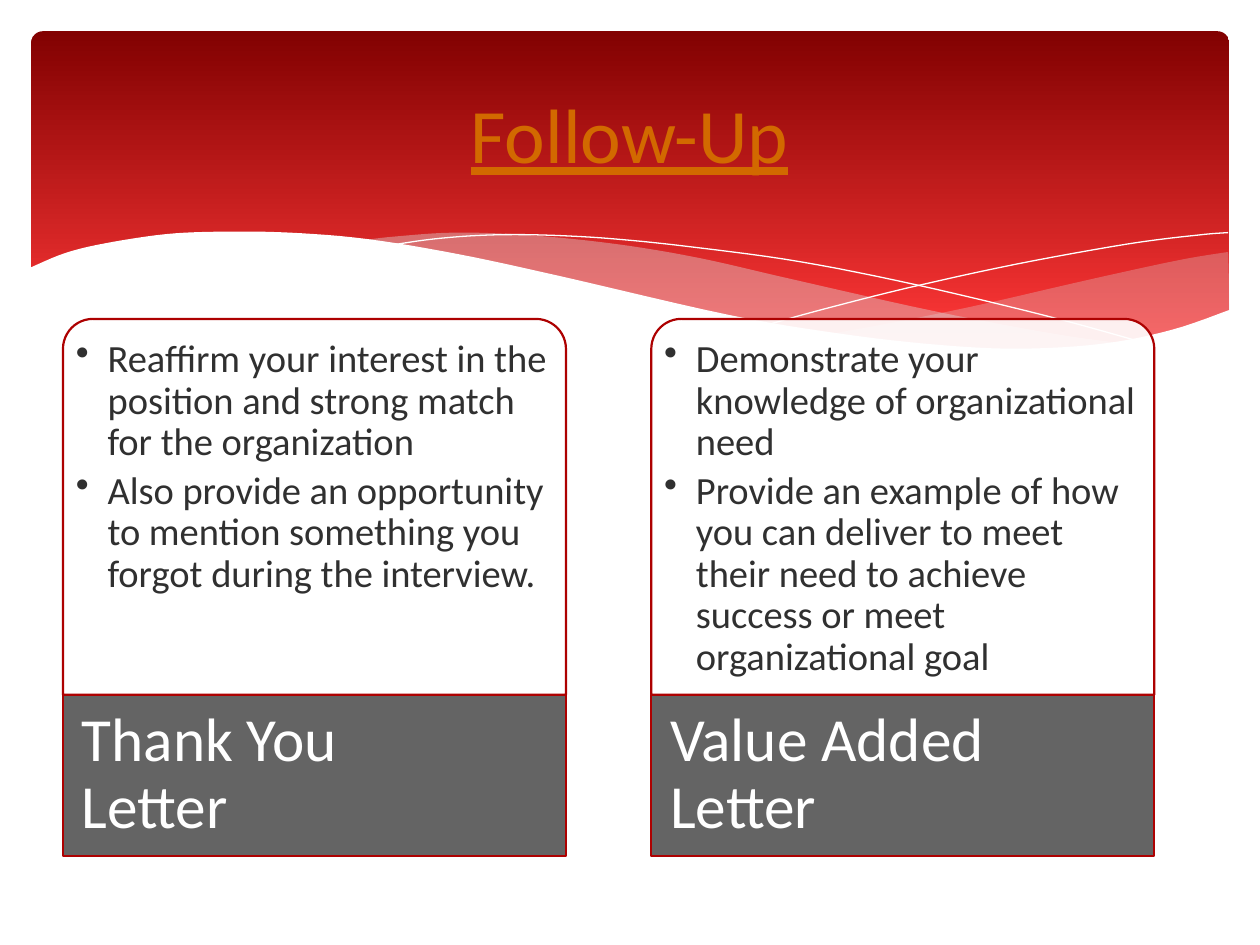
from lxml.etree import SubElement
from pptx import Presentation
from pptx.dml.color import RGBColor
from pptx.enum.shapes import MSO_SHAPE
from pptx.enum.text import MSO_ANCHOR, PP_ALIGN
from pptx.oxml.ns import qn
from pptx.util import Cm, Pt

DARK_RED = RGBColor(0x82, 0x01, 0x01)
BRIGHT_RED = RGBColor(0xFE, 0x37, 0x37)
BORDER_RED = RGBColor(0xAD, 0x01, 0x01)
ORANGE = RGBColor(0xD2, 0x69, 0x00)
MIST = RGBColor(0xDE, 0xDE, 0xE0)
GRAY = RGBColor(0x64, 0x64, 0x64)
CHARCOAL = RGBColor(0x30, 0x30, 0x30)
WHITE = RGBColor(0xFF, 0xFF, 0xFF)

RIGHT_SWELL_TOP = [(24.13, 4.45), (23.11, 4.62), (21.23, 5.03), (19.15, 5.51),
                   (17.3, 5.89), (16.15, 6.1)]
RIGHT_SWELL_BOTTOM = [(16.15, 6.1), (17.63, 6.27), (18.9, 6.38), (20.04, 6.43),
                      (21.29, 6.38), (22.35, 6.22), (23.29, 5.94), (24.16, 5.64)]
MIDDLE_SWELL_TOP = [(22.05, 6.3), (20.62, 6.1), (18.19, 5.64), (15.34, 5),
                    (13.46, 4.57), (11.79, 4.29), (10.03, 4.11), (8.53, 4.06),
                    (7.32, 4.14), (6.63, 4.22)]
MIDDLE_SWELL_BOTTOM = [(6.63, 4.22), (8.05, 4.42), (9.63, 4.72), (10.77, 5),
                       (12.83, 5.46), (14.63, 5.84), (16.26, 6.12), (17.7, 6.32),
                       (19, 6.4), (20.14, 6.43), (21.13, 6.4), (22.05, 6.3)]
FALLING_LINE = [(7.21, 4.32), (8.1, 4.19), (9.19, 4.11), (10.36, 4.11),
                (11.79, 4.19), (13.49, 4.37), (15.52, 4.65), (17.83, 5.11),
                (20.47, 5.74), (22.4, 6.27)]
RISING_LINE = [(14.94, 5.89), (15.95, 5.61), (17.65, 5.18), (19.84, 4.7),
               (22.1, 4.29), (23.52, 4.11), (24.13, 4.06)]
WHITE_CREST = [(24.18, 5.61), (22.99, 6.02), (21.59, 6.3), (19.91, 6.4),
               (18.26, 6.32), (16.33, 6.1), (14.07, 5.72), (10.72, 4.95),
               (8.64, 4.5), (6.78, 4.19), (5.21, 4.06), (3.86, 4.04),
               (2.72, 4.09), (1.52, 4.27), (0.69, 4.47), (-0.05, 4.78)]
WHITE_BASE = [(-0.05, 7.72), (24.18, 7.72)]

LETTERS = [
    ("Thank You Letter", [
        "Reaffirm your interest in the position and strong match for the organization",
        "Also provide an opportunity to mention something you forgot during the interview.",
    ]),
    ("Value Added Letter", [
        "Demonstrate your knowledge of organizational need",
        "Provide an example of how you can deliver to meet their need to achieve "
        "success or meet organizational goal",
    ]),
]


def smooth(knots, steps=6):
    """Return points on a Catmull-Rom curve through the knots."""
    padded = [knots[0], *knots, knots[-1]]
    points = [knots[0]]
    for a, b, c, d in zip(padded, padded[1:], padded[2:], padded[3:]):
        for step in range(1, steps + 1):
            t = step / steps
            points.append(tuple(
                0.5 * (2 * q + (r - p) * t + (2 * p - 5 * q + 4 * r - s) * t ** 2
                       + (3 * q - p - 3 * r + s) * t ** 3)
                for p, q, r, s in zip(a, b, c, d)))
    return points


def style(shape, fill=None, opacity=100, line=None, width=1.25):
    """Set the fill, opacity and outline of a shape."""
    shape.shadow.inherit = False
    if fill is None:
        shape.fill.background()
    else:
        shape.fill.solid()
        shape.fill.fore_color.rgb = fill
        if opacity < 100:
            color = shape.fill._xPr.find(qn("a:solidFill"))[0]
            SubElement(color, qn("a:alpha"), val=str(opacity * 1000))
    if line is None:
        shape.line.fill.background()
    else:
        shape.line.color.rgb = line
        shape.line.width = Pt(width)


def add_outline(slide, left, top, points, closed=True, **look):
    """Draw a freeform through points given relative to the box corner."""
    corners = [(Cm(left + x), Cm(top + y)) for x, y in points]
    builder = slide.shapes.build_freeform(*corners[0], scale=1.0)
    builder.add_line_segments(corners[1:], close=closed)
    style(builder.convert_to_shape(), **look)


def add_text(slide, box, paragraphs, *, size, color, insets=(0.25, 0.13, 0.25, 0.13),
             anchor=MSO_ANCHOR.TOP, align=PP_ALIGN.LEFT, underline=False,
             bullet=False, line_spacing=1.0, space_after=0):
    """Add a wrapped text box with the given paragraphs and format."""
    frame = slide.shapes.add_textbox(*map(Cm, box)).text_frame
    frame.word_wrap = True
    frame.vertical_anchor = anchor
    (frame.margin_left, frame.margin_top,
     frame.margin_right, frame.margin_bottom) = map(Cm, insets)
    for index, text in enumerate(paragraphs):
        paragraph = frame.add_paragraph() if index else frame.paragraphs[0]
        paragraph.alignment = align
        paragraph.line_spacing = line_spacing
        paragraph.space_after = Pt(space_after)
        run = paragraph.add_run()
        run.text = text
        run.font.name = "Calibri"
        run.font.size = Pt(size)
        run.font.color.rgb = color
        run.font.underline = underline
        if bullet:
            properties = paragraph._p.get_or_add_pPr()
            properties.set("marL", str(Cm(0.64)))
            properties.set("indent", str(-Cm(0.64)))
            SubElement(properties, qn("a:buChar"), char="•")


def add_header(slide, left, top, width, height):
    """Draw the red banner with its waves and the title."""
    banner = slide.shapes.add_shape(
        MSO_SHAPE.ROUNDED_RECTANGLE, Cm(left), Cm(top), Cm(width), Cm(height))
    banner.adjustments[0] = 0.034
    style(banner)
    banner.fill.gradient()
    banner.fill.gradient_angle = 270
    stops = banner.fill.gradient_stops
    for stop, position, color in zip(stops, (0, 0.9), (DARK_RED, BRIGHT_RED)):
        stop.position = position
        stop.color.rgb = color

    right_swell = smooth(RIGHT_SWELL_TOP) + smooth(RIGHT_SWELL_BOTTOM)
    middle_swell = smooth(MIDDLE_SWELL_TOP) + smooth(MIDDLE_SWELL_BOTTOM)
    add_outline(slide, left, top, right_swell, fill=MIST, opacity=29)
    add_outline(slide, left, top, middle_swell, fill=MIST, opacity=40)
    for knots in (FALLING_LINE, RISING_LINE):
        add_outline(slide, left, top, smooth(knots), closed=False, line=WHITE, width=0)
    add_outline(slide, left, top, smooth(WHITE_CREST) + WHITE_BASE, fill=WHITE)
    add_text(slide, (left + 0.63, top + 0.3, width - 1.29, 3.48), ["Follow-Up"],
             size=44, color=ORANGE, anchor=MSO_ANCHOR.MIDDLE,
             align=PP_ALIGN.CENTER, underline=True)


def add_letter_card(slide, left, top, width, height, heading, points):
    """Draw a bulleted panel above its heading bar."""
    panel_height = height * 0.7
    bar_top, bar_height = top + panel_height, height - panel_height
    panel = slide.shapes.add_shape(
        MSO_SHAPE.ROUND_2_SAME_RECTANGLE,
        Cm(left), Cm(top), Cm(width), Cm(panel_height))
    panel.adjustments[0] = 0.08
    panel.adjustments[1] = 0
    style(panel, fill=WHITE, opacity=90, line=BORDER_RED)
    add_text(slide, (left + 0.18, top + 0.18, width - 0.36, panel_height - 0.18),
             points, size=22, color=CHARCOAL, insets=(0.08, 0.23, 0.08, 0.08),
             bullet=True, line_spacing=0.9, space_after=4)
    bar = slide.shapes.add_shape(
        MSO_SHAPE.RECTANGLE, Cm(left), Cm(bar_top), Cm(width), Cm(bar_height))
    style(bar, fill=GRAY, line=BORDER_RED)
    add_text(slide, (left, bar_top, width * 0.7, bar_height), [heading],
             size=35, color=WHITE, insets=(0.38, 0, 0.13, 0),
             anchor=MSO_ANCHOR.MIDDLE, line_spacing=0.9)


def main():
    """Build the slide and save it."""
    presentation = Presentation()
    presentation.slide_width, presentation.slide_height = Cm(25.4), Cm(19.05)
    slide = presentation.slides.add_slide(presentation.slide_layouts[6])
    add_header(slide, 0.63, 0.63, 24.15, 6.86)
    for index, (heading, points) in enumerate(LETTERS):
        add_letter_card(slide, 1.27 + index * 11.86, 6.43, 10.14, 10.82, heading, points)
    presentation.save("out.pptx")


if __name__ == "__main__":
    main()
